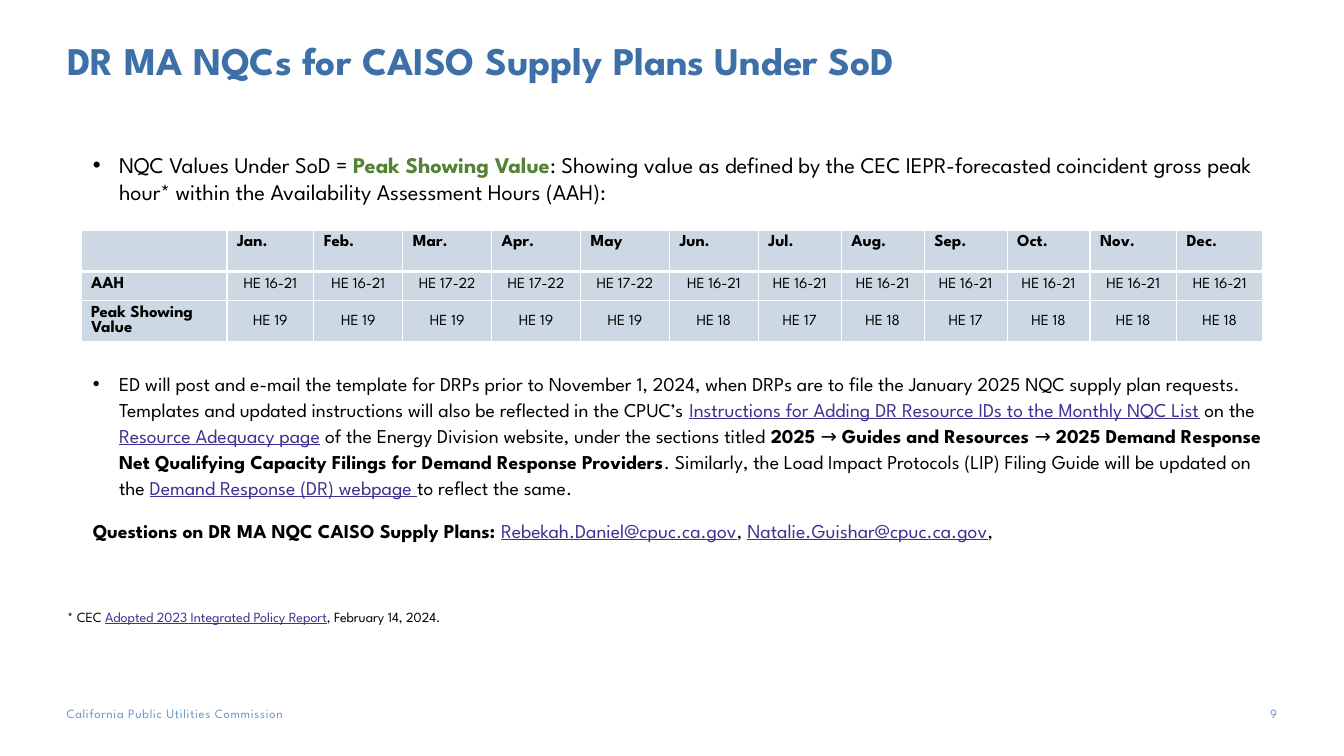
from lxml.etree import SubElement
from pptx import Presentation
from pptx.dml.color import RGBColor
from pptx.enum.text import MSO_ANCHOR, PP_ALIGN
from pptx.oxml.ns import qn
from pptx.util import Cm, Pt

FONT = "League Spartan"
BLACK = RGBColor(0x00, 0x00, 0x00)
TITLE_BLUE = RGBColor(0x3D, 0x6F, 0xA9)
FOOTER_BLUE = RGBColor(0x69, 0x96, 0xC9)
GREEN = RGBColor(0x54, 0x82, 0x34)
LINK = RGBColor(0x40, 0x30, 0x93)
CELL_FILL = RGBColor(0xCC, 0xD8, 0xE4)
BORDER = "FFFFFF"

MONTHS = ["Jan.", "Feb.", "Mar.", "Apr.", "May", "Jun.",
          "Jul.", "Aug.", "Sep.", "Oct.", "Nov.", "Dec."]
EARLY, LATE = "HE 16-21", "HE 17-22"
ASSESSMENT_HOURS = [EARLY] * 2 + [LATE] * 3 + [EARLY] * 7
PEAK_HOURS = [19] * 5 + [18, 17, 18, 17, 18, 18, 18]
HOUR_ROWS = [
    [""] + MONTHS,
    ["AAH"] + ASSESSMENT_HOURS,
    ["Peak Showing Value"] + [f"HE {hour}" for hour in PEAK_HOURS],
]
COLUMN_WIDTHS = [3.68, 2.19] + [2.24] * 5 + [2.09] * 4 + [2.18] * 2
ROW_HEIGHTS = [1.04, 0.74, 1.04]

NQC_DEFINITION = [
    ("NQC Values Under SoD = ", "plain"),
    ("Peak Showing Value", "green"),
    (": Showing value as defined by the CEC IEPR-forecasted coincident gross peak "
     "hour* within the Availability Assessment Hours (AAH):", "plain"),
]
TEMPLATE_NOTICE = [
    ("ED will post and e-mail the template for DRPs prior to November 1, 2024, when "
     "DRPs are to file the January 2025 NQC supply plan requests. Templates and "
     "updated instructions will also be reflected in the CPUC’s ", "plain"),
    ("Instructions for Adding DR Resource IDs to the Monthly NQC List", "link"),
    (" on the ", "plain"),
    ("Resource Adequacy page", "link"),
    (" of the Energy Division website, under the sections titled ", "plain"),
    ("2025 ", "bold"),
    ("→ ", "plain"),
    ("Guides and Resources ", "bold"),
    ("→ ", "plain"),
    ("2025 Demand Response Net Qualifying Capacity Filings for Demand Response "
     "Providers", "bold"),
    (". Similarly, the Load Impact Protocols (LIP) Filing Guide will be updated on "
     "the ", "plain"),
    ("Demand Response (DR) webpage ", "link"),
    ("to reflect the same.", "plain"),
]
QUESTIONS = [
    ("Questions on DR MA NQC CAISO Supply Plans: ", "bold"),
    ("Rebekah.Daniel@cpuc.ca.gov", "link"),
    (", ", "plain"),
    ("Natalie.Guishar@cpuc.ca.gov", "link"),
    (",", "plain"),
]
FOOTNOTE = [
    ("* CEC ", "plain"),
    ("Adopted 2023 Integrated Policy Report", "link"),
    (", February 14, 2024.", "plain"),
]
STYLES = {
    "plain": (BLACK, False, False),
    "bold": (BLACK, True, False),
    "green": (GREEN, True, False),
    "link": (LINK, False, True),
    "title": (TITLE_BLUE, True, False),
    "footer": (FOOTER_BLUE, False, False),
}


def add_span(para, text, size, style):
    color, bold, underline = STYLES[style]
    span = para.add_run()
    span.text = text
    span.font.name = FONT
    span.font.size = Pt(size)
    span.font.color.rgb = color
    span.font.bold = bold
    span.font.underline = underline
    return span


def add_box(page, left, top, width, height, insets=(0, 0, 0, 0)):
    box = page.shapes.add_textbox(Cm(left), Cm(top), Cm(width), Cm(height))
    frame = box.text_frame
    frame.word_wrap = True
    (frame.margin_left, frame.margin_top,
     frame.margin_right, frame.margin_bottom) = map(Cm, insets)
    return frame


def indent(para, margin, first_line=0, bullet=False):
    properties = para._p.get_or_add_pPr()
    properties.set("marL", str(Cm(margin)))
    properties.set("indent", str(Cm(first_line)))
    if bullet:
        SubElement(properties, qn("a:buFont")).set("typeface", "Arial")
        SubElement(properties, qn("a:buChar")).set("char", "•")


def add_title(page, left, top, width, height):
    frame = add_box(page, left, top, width, height, (0, 0.13, 0.25, 0.13))
    frame.vertical_anchor = MSO_ANCHOR.BOTTOM
    add_span(frame.paragraphs[0], "DR MA NQCs for CAISO Supply Plans Under SoD",
             28, "title")


def add_body(page, left, top, width, height):
    frame = add_box(page, left, top, width, height, (0, 1.27, 0.25, 0.13))
    blocks = [
        (NQC_DEFINITION, 16, 19.3, 0, (1.3, -0.66, True)),
        (TEMPLATE_NOTICE, 14, 18.6, 117, (1.3, -0.66, True)),
        (QUESTIONS, 14, 18.6, 12, (0.64,)),
        (FOOTNOTE, 10, 13, 46.5, (0,)),
    ]
    for number, (spans, size, pitch, gap, indents) in enumerate(blocks):
        para = frame.add_paragraph() if number else frame.paragraphs[0]
        indent(para, *indents)
        para.line_spacing = Pt(pitch)
        if number:
            para.space_before = Pt(gap)
        for text, style in spans:
            add_span(para, text, size, style)


def add_border(cell, side, width):
    line = SubElement(cell._tc.get_or_add_tcPr(), qn(f"a:ln{side}"))
    line.set("w", str(Pt(width)))
    fill = SubElement(line, qn("a:solidFill"))
    SubElement(fill, qn("a:srgbClr")).set("val", BORDER)


def fill_cell(cell, text, row, column):
    for side in "LRTB":
        thick = (row, side) in ((0, "B"), (1, "T"))
        add_border(cell, side, 3 if thick else 1)
    cell.fill.solid()
    cell.fill.fore_color.rgb = CELL_FILL
    para = cell.text_frame.paragraphs[0]
    para.line_spacing = Pt(11)
    is_value = row > 0 and column > 0
    if is_value:
        para.alignment = PP_ALIGN.CENTER
        if row == 2:
            cell.vertical_anchor = MSO_ANCHOR.MIDDLE
    if text:
        add_span(para, text, 11 if is_value else 12, "plain" if is_value else "bold")
    else:
        para.font.size = Pt(12)


def add_hours_table(page, left, top):
    table = page.shapes.add_table(
        len(ROW_HEIGHTS), len(COLUMN_WIDTHS), Cm(left), Cm(top),
        Cm(sum(COLUMN_WIDTHS)), Cm(sum(ROW_HEIGHTS))).table
    for column, width in zip(table.columns, COLUMN_WIDTHS):
        column.width = Cm(width)
    for row, height in zip(table.rows, ROW_HEIGHTS):
        row.height = Cm(height)
    for row, texts in enumerate(HOUR_ROWS):
        for column, text in enumerate(texts):
            fill_cell(table.cell(row, column), text, row, column)


def add_footer(page, left, top, width, height):
    number_width = 1.07
    agency = add_box(page, left, top, 8.15, height).paragraphs[0]
    number = add_box(page, left + width - number_width, top,
                     number_width, height).paragraphs[0]
    number.alignment = PP_ALIGN.RIGHT
    for para in (agency, number):
        para.line_spacing = Pt(11)
    span = add_span(agency, "California Public Utilities Commission", 9, "footer")
    span.font._element.set("spc", "50")
    add_span(number, "9", 9, "footer")


def main():
    deck = Presentation()
    deck.slide_width, deck.slide_height = Cm(33.87), Cm(19.05)
    page = deck.slides.add_slide(deck.slide_layouts[6])
    add_title(page, 1.7, 0.43, 30.5, 1.8)
    add_body(page, 1.7, 2.54, 30.5, 14.27)
    add_hours_table(page, 2.04, 5.8)
    add_footer(page, 1.68, 17.78, 30.5, 0.4)
    deck.save("out.pptx")


if __name__ == "__main__":
    main()
